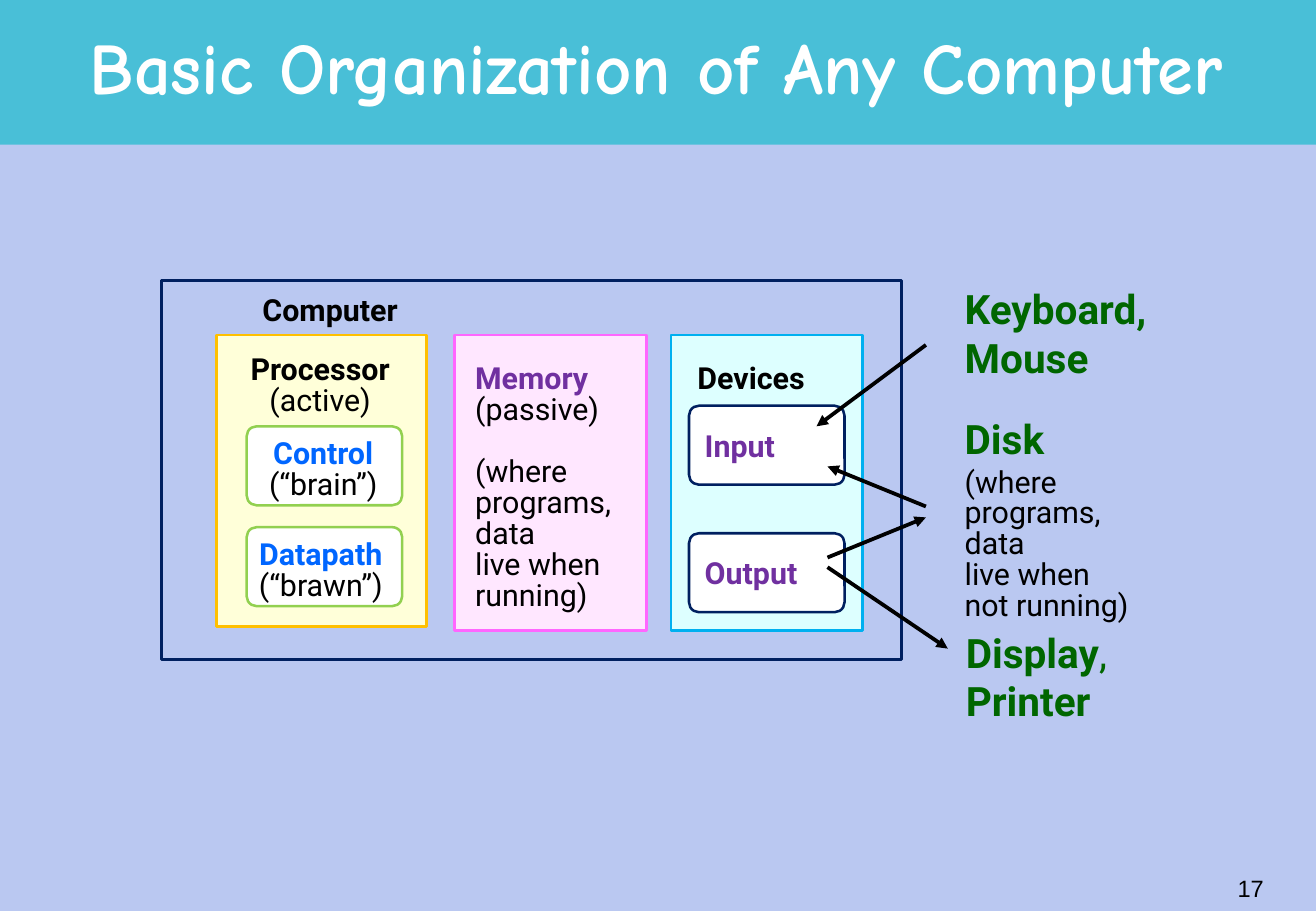
from dataclasses import dataclass

import lxml.etree
import pptx
import pptx.dml.color
import pptx.enum.shapes
import pptx.enum.text
import pptx.oxml.ns
import pptx.slide
import pptx.text.text
import pptx.util

RGBColor = pptx.dml.color.RGBColor
Shape = pptx.enum.shapes.MSO_SHAPE
Align = pptx.enum.text.PP_ALIGN
Anchor = pptx.enum.text.MSO_ANCHOR
AutoSize = pptx.enum.text.MSO_AUTO_SIZE

PX = 9144  # EMU; 100 px to the inch

BACKGROUND = RGBColor(0xBA, 0xC8, 0xF1)
TEAL = RGBColor(0x49, 0xBF, 0xD7)
BLACK = RGBColor(0, 0, 0)
WHITE = RGBColor(0xFF, 0xFF, 0xFF)
NAVY = RGBColor(0x00, 0x20, 0x60)
PALE_YELLOW = RGBColor(0xFF, 0xFF, 0xD9)
GOLD = RGBColor(0xFF, 0xC0, 0x00)
PALE_PINK = RGBColor(0xFF, 0xE7, 0xFF)
PINK = RGBColor(0xFF, 0x66, 0xFF)
PALE_CYAN = RGBColor(0xDD, 0xFF, 0xFF)
SKY = RGBColor(0x00, 0xB0, 0xF0)
LIME = RGBColor(0x92, 0xD0, 0x50)
BLUE = RGBColor(0x00, 0x66, 0xFF)
PURPLE = RGBColor(0x70, 0x30, 0xA0)
GREEN = RGBColor(0x00, 0x66, 0x00)


@dataclass
class Box:
    left: int
    top: int
    width: int
    height: int
    fill: RGBColor | None = None
    line: RGBColor | None = None
    rounded: bool = False


@dataclass
class Line:
    text: str
    color: RGBColor = BLACK
    bold: bool = False
    size: int = 18
    spacing: float = 0.85
    before: float = 0
    light_tail: str = ""
    font: str = "Roboto"


@dataclass
class Label:
    left: int
    top: int
    width: int
    height: int
    lines: list[Line]
    align: Align = Align.LEFT
    inset: tuple[int, int] = (7, 3)
    wrap: bool = False
    anchor: Anchor = Anchor.TOP
    auto_size: AutoSize = AutoSize.SHAPE_TO_FIT_TEXT


@dataclass
class Arrow:
    start: tuple[int, int]
    end: tuple[int, int]


def heading(text: str, color: RGBColor = BLACK) -> Line:
    return Line(text, color, bold=True)


def outside(text: str, light_tail: str = "") -> Line:
    return Line(text, GREEN, bold=True, size=24, spacing=1.0, light_tail=light_tail)


def small_box(left: int, top: int, line: RGBColor) -> Box:
    return Box(left, top, 128, 65, WHITE, line, rounded=True)


BOXES = [
    Box(0, 0, 1083, 119, TEAL),
    # Computer and its three parts
    Box(133, 231, 609, 312, line=NAVY),
    Box(178, 276, 173, 240, PALE_YELLOW, GOLD),
    Box(374, 276, 158, 243, PALE_PINK, PINK),
    Box(552, 276, 158, 243, PALE_CYAN, SKY),
    # Control, datapath, input, output
    small_box(203, 351, LIME),
    small_box(203, 434, LIME),
    small_box(567, 334, NAVY),
    small_box(567, 439, NAVY),
]

LABELS = [
    # Inside the computer
    Label(209, 241, 143, 31, [heading("Computer")]),
    Label(186, 290, 155, 57, [heading("Processor"), Line("(active)")], Align.CENTER),
    Label(214, 359, 104, 57, [heading("Control", BLUE), Line("(“brain”)")], Align.CENTER),
    Label(203, 442, 122, 57, [heading("Datapath", BLUE), Line("(“brawn”)")], Align.CENTER),
    Label(384, 297, 135, 212, [
        heading("Memory", PURPLE), Line("(passive)"), Line("(where", before=18.4),
        Line("programs,"), Line("data"), Line("live when"), Line("running)")]),
    Label(567, 297, 117, 31, [heading("Devices")]),
    Label(573, 353, 76, 31, [heading("Input", PURPLE)]),
    Label(573, 458, 97, 31, [heading("Output", PURPLE)]),
    # Outside the computer
    Label(784, 229, 209, 90, [outside("Keyboard,"), outside("Mouse")], inset=(10, 5)),
    Label(784, 336, 199, 182, [
        outside("Disk"), Line("(where", spacing=1.0), Line("programs,"), Line("data"),
        Line("live when"), Line("not running)")], inset=(10, 5), wrap=True),
    Label(785, 512, 170, 90, [outside("Display", light_tail=","), outside("Printer")],
          inset=(10, 5)),
    # Slide number
    Label(824, 714, 226, 34, [Line("17", size=14, spacing=1.0, font="Arial")], Align.RIGHT,
          (10, 5), anchor=Anchor.MIDDLE, auto_size=AutoSize.NONE),
]

ARROWS = [
    Arrow((681, 467), (780, 534)),
    Arrow((762, 284), (672, 351)),
    Arrow((762, 417), (681, 384)),
    Arrow((681, 459), (762, 426)),
]


def draw_box(slide: pptx.slide.Slide, box: Box) -> None:
    kind = Shape.ROUNDED_RECTANGLE if box.rounded else Shape.RECTANGLE
    panel = slide.shapes.add_shape(
        kind, box.left * PX, box.top * PX, box.width * PX, box.height * PX)
    panel.shadow.inherit = False
    if box.rounded:
        panel.adjustments[0] = 0.125
    if box.fill is None:
        panel.fill.background()
    else:
        panel.fill.solid()
        panel.fill.fore_color.rgb = box.fill
    if box.line is None:
        panel.line.fill.background()
    else:
        panel.line.color.rgb = box.line
        panel.line.width = pptx.util.Pt(1.5)


def write_lines(frame: pptx.text.text.TextFrame, lines: list[Line], align: Align) -> None:
    for index, line in enumerate(lines):
        paragraph = frame.add_paragraph() if index else frame.paragraphs[0]
        paragraph.alignment = align
        paragraph.line_spacing = line.spacing
        if line.before:
            paragraph.space_before = pptx.util.Pt(line.before)
        paragraph.font.name = line.font
        paragraph.font.size = pptx.util.Pt(line.size)
        paragraph.font.bold = line.bold
        paragraph.font.color.rgb = line.color
        paragraph.add_run().text = line.text
        if line.light_tail:
            tail = paragraph.add_run()
            tail.text = line.light_tail
            tail.font.bold = False


def draw_label(slide: pptx.slide.Slide, label: Label) -> None:
    frame = slide.shapes.add_textbox(
        label.left * PX, label.top * PX, label.width * PX, label.height * PX).text_frame
    frame.margin_left = frame.margin_right = label.inset[0] * PX
    frame.margin_top = frame.margin_bottom = label.inset[1] * PX
    frame.word_wrap = label.wrap
    frame.auto_size = label.auto_size
    frame.vertical_anchor = label.anchor
    write_lines(frame, label.lines, label.align)


def draw_arrow(slide: pptx.slide.Slide, arrow: Arrow) -> None:
    connector = slide.shapes.add_connector(
        pptx.enum.shapes.MSO_CONNECTOR.STRAIGHT,
        *(value * PX for value in arrow.start + arrow.end))
    connector.line.color.rgb = BLACK
    connector.line.width = pptx.util.Pt(2.25)
    qn = pptx.oxml.ns.qn
    lxml.etree.SubElement(connector.line._get_or_add_ln(), qn("a:tailEnd"), type="triangle")
    lxml.etree.SubElement(connector.element.spPr, qn("a:effectLst"))


def main() -> None:
    deck = pptx.Presentation()
    deck.slide_width, deck.slide_height = 1083 * PX, 750 * PX
    slide = deck.slides.add_slide(deck.slide_layouts[5])
    slide.background.fill.solid()
    slide.background.fill.fore_color.rgb = BACKGROUND

    for box in BOXES:
        draw_box(slide, box)
    for label in LABELS:
        draw_label(slide, label)
    for arrow in ARROWS:
        draw_arrow(slide, arrow)

    # Title, in front of its band
    title = slide.shapes.title
    title.left, title.top, title.width, title.height = -14 * PX, 14 * PX, 1108 * PX, 79 * PX
    title.text_frame.auto_size = AutoSize.NONE
    title.text_frame.vertical_anchor = Anchor.MIDDLE
    write_lines(title.text_frame, [Line("Basic Organization of Any Computer", WHITE, True, 43,
                                        1.0, font="Comic Neue")], Align.CENTER)
    title.element.getparent().append(title.element)

    deck.save("out.pptx")


if __name__ == "__main__":
    main()
